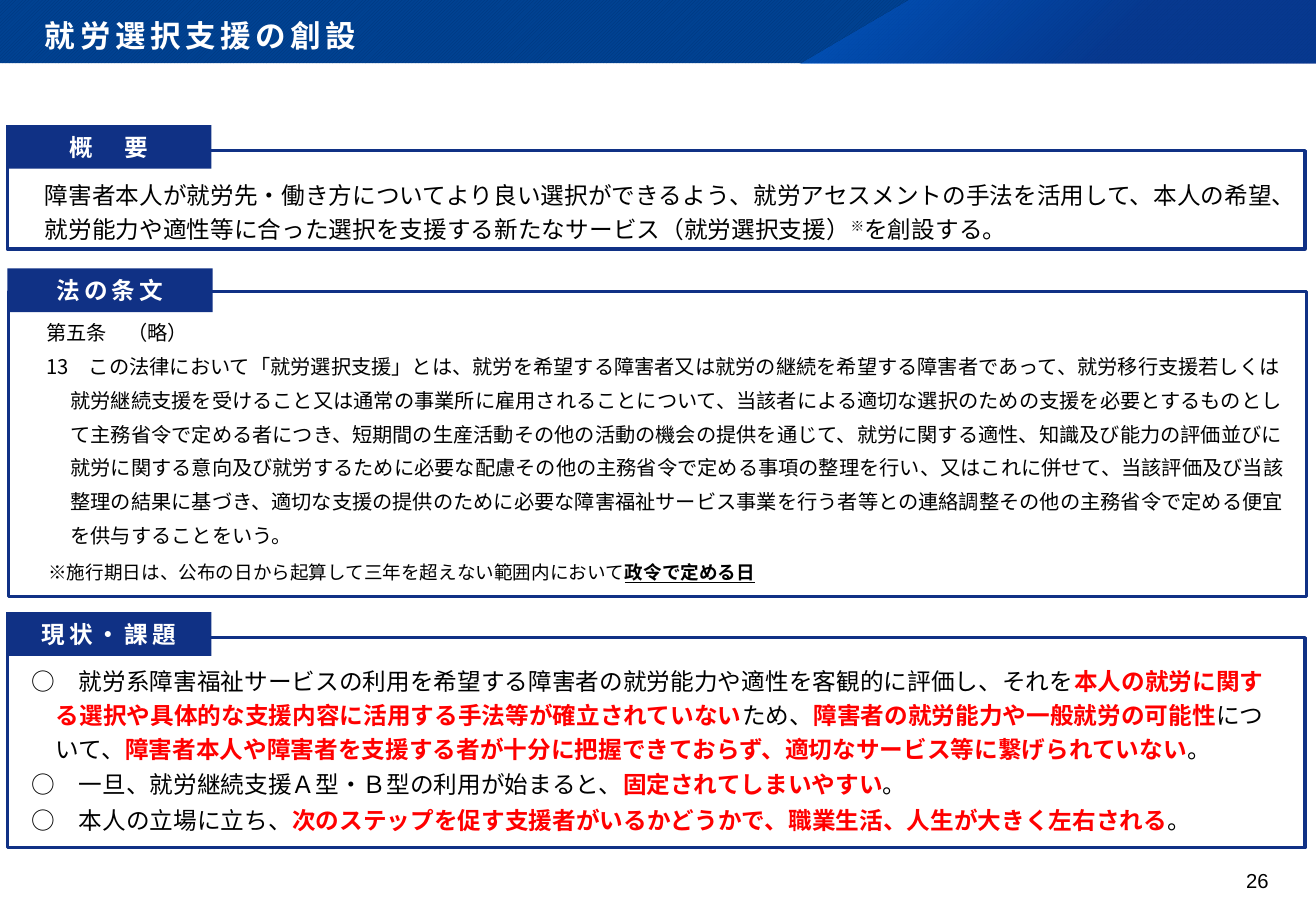
from pptx import Presentation
from pptx.dml.color import RGBColor as Rgb
from pptx.enum.dml import MSO_PATTERN as Pat
from pptx.enum.shapes import MSO_SHAPE as Kind
from pptx.enum.text import MSO_ANCHOR as Anchor, PP_ALIGN as Align
from pptx.oxml import parse_xml
from pptx.oxml.ns import nsdecls, qn
from pptx.util import Inches, Pt

HUES = {"navy": "103185", "white": "FFFFFF", "black": "000000", "red": "FF0000",
        "band": "004292", "stripe": "003579", "glow": "0064DF", "deep": "0C338E"}
FONT = "Noto Sans CJK JP"
RED = {"hue": "red", "bold": True}


def hue(name):
    return Rgb.from_string(HUES[name])


def write(para, text, size=14, font=FONT, hue_name="black", bold=False, line=False, track=0, base=0):
    run = para.add_run()
    run.text = text
    face = run.font
    face.name, face.size, face.bold, face.underline = font, Pt(size), bold, line
    face.color.rgb = hue(hue_name)
    props = run._r.get_or_add_rPr()
    if track:
        props.set("spc", str(int(track * 100)))
    if base:
        props.set("baseline", str(base * 1000))
    east = props.makeelement(qn("a:ea"), {"typeface": font})
    props.find(qn("a:latin")).addnext(east)


class Deck:
    """Holds the style and the current slide, and draws each kind of element."""

    def __init__(self, wide, high):
        self.show = Presentation()
        self.show.slide_width, self.show.slide_height = Inches(wide), Inches(high)
        self.slide = self.show.slides.add_slide(self.show.slide_layouts[6])
        self.shapes = self.slide.shapes

    def rect(self, *spot, fill=None, line=None):
        shape = self.shapes.add_shape(Kind.RECTANGLE, *map(Inches, spot))
        shape.shadow.inherit = False
        if fill:
            shape.fill.solid()
            shape.fill.fore_color.rgb = hue(fill)
        else:
            shape.fill.background()
        if line:
            shape.line.color.rgb = hue(line)
            shape.line.width = Pt(2)
        else:
            shape.line.fill.background()
        return shape

    def text(self, shape, paras, pad=(0.1, 0.05, 0.1, 0.05), anchor=Anchor.TOP, align=Align.LEFT, **style):
        frame = shape.text_frame
        frame.word_wrap, frame.vertical_anchor = True, anchor
        (frame.margin_left, frame.margin_top,
         frame.margin_right, frame.margin_bottom) = map(Inches, pad)
        for i, (runs, space, after, hang) in enumerate(paras):
            para = frame.add_paragraph() if i else frame.paragraphs[0]
            para.alignment, para.line_spacing = align, space
            para.space_before, para.space_after = Pt(0), Pt(after)
            if hang:
                props = para._p.get_or_add_pPr()
                props.set("marL", str(Inches(hang)))
                props.set("indent", str(-Inches(hang)))
            for words, extra in runs:
                look = {**style, **extra}
                look["hue_name"] = look.pop("hue", "black")
                write(para, words, **look)

    def label(self, spot, paras, **style):
        self.text(self.shapes.add_textbox(*map(Inches, spot)), paras, **style)

    def panel(self, spot, paras, left=0.31, **style):
        self.text(self.rect(*spot, line="navy"), paras, pad=(left, 0.2, 0.16, 0.2), **style)

    def tag(self, left, top, words):
        shape = self.rect(left, top, 1.69, 0.36, fill="navy")
        self.text(shape, [([(words, {})], 1, 0, 0)], anchor=Anchor.MIDDLE,
                  align=Align.CENTER, hue="white", bold=True, track=2.4)

    def banner(self):
        band = self.rect(0, 0, 10.83, 0.52, fill="band")
        band.fill.patterned()
        band.fill.pattern = Pat.DARK_UPWARD_DIAGONAL
        band.fill.fore_color.rgb, band.fill.back_color.rgb = hue("stripe"), hue("band")
        pen = self.shapes.build_freeform(Inches(7.49), 0)
        pen.add_line_segments([(Inches(x), Inches(y)) for x, y in
                               [(10.83, 0), (10.83, 0.52), (6.58, 0.52)]])
        wedge = pen.convert_to_shape()
        wedge.shadow.inherit = False
        wedge.line.fill.background()
        wedge.fill.gradient()
        stops = "".join(
            f'<a:gs pos="{pos}000"><a:srgbClr val="{HUES[name]}"><a:alpha val="{alpha}000"/></a:srgbClr></a:gs>'
            for pos, name, alpha in [(0, "glow", 50), (62, "deep", 55)])
        grad = parse_xml(f'<a:gradFill {nsdecls("a")} rotWithShape="1"><a:gsLst>{stops}</a:gsLst>'
                         '<a:path path="circle"><a:fillToRect r="100000" b="100000"/></a:path></a:gradFill>')
        props = wedge._element.spPr
        props.replace(props.find(qn("a:gradFill")), grad)


def main():
    deck = Deck(10.83, 7.5)
    deck.banner()
    deck.label((9.75, 7.15, 0.69, 0.3), [([("26", {})], 1, 0, 0)],
               pad=(0, 0, 0, 0), align=Align.RIGHT, size=12, font="Arial")
    deck.label((-0.02, -0.04, 10.83, 0.63), [([("就労選択支援の創設", {})], 0.9, 0, 0)],
               pad=(0.39, 0, 0.36, 0.14), anchor=Anchor.BOTTOM,
               size=18.1, font="Roboto", hue="white", bold=True, track=2.7)

    deck.panel((0.06, 1.24, 10.68, 0.81), [([
        ("障害者本人が就労先・働き方についてより良い選択ができるよう、就労アセスメントの手法を活用して、本人の希望、"
         "就労能力や適性等に合った選択を支援する新たなサービス（就労選択支援）", {}),
        ("※", {"base": 30}),
        ("を創設する。", {})], 1.2, 7, 0)])
    deck.tag(0.05, 1.03, "概　要")

    deck.panel((0.07, 2.4, 10.68, 2.51), [
        ([("第五条　（略）", {})], 1.2, 0, 0.2),
        ([("13　この法律において「就労選択支援」とは、就労を希望する障害者又は就労の継続を希望する障害者であって、"
           "就労移行支援若しくは就労継続支援を受けること又は通常の事業所に雇用されることについて、"
           "当該者による適切な選択のための支援を必要とするものとして主務省令で定める者につき、"
           "短期間の生産活動その他の活動の機会の提供を通じて、就労に関する適性、知識及び能力の評価並びに"
           "就労に関する意向及び就労するために必要な配慮その他の主務省令で定める事項の整理を行い、"
           "又はこれに併せて、当該評価及び当該整理の結果に基づき、適切な支援の提供のために必要な"
           "障害福祉サービス事業を行う者等との連絡調整その他の主務省令で定める便宜を供与することをいう。", {})],
         Pt(20), 0, 0.2)], size=12)
    deck.label((0.3, 4.53, 8.52, 0.44), [([
        ("※施行期日は、公布の日から起算して三年を超えない範囲内において", {}),
        ("政令で定める日", {"bold": True, "line": True})], 1.2, 6, 0)], size=11)
    deck.tag(0.06, 2.21, "法の条文")

    deck.panel((0.06, 5.25, 10.68, 1.73), [
        ([("○　就労系障害福祉サービスの利用を希望する障害者の就労能力や適性を客観的に評価し、それを", {}),
          ("本人の就労に関する選択や具体的な支援内容に活用する手法等が確立されていない", RED),
          ("ため、", {}),
          ("障害者の就労能力や一般就労の可能性", RED),
          ("について、", {}),
          ("障害者本人や障害者を支援する者が十分に把握できておらず、適切なサービス等に繋げられていない", RED),
          ("。", {})], Pt(20), 7, 0.2),
        ([("○　一旦、就労継続支援Ａ型・Ｂ型の利用が始まると、", {}),
          ("固定されてしまいやすい", RED),
          ("。", {})], Pt(14), 7, 0),
        ([("○　本人の立場に立ち、", {}),
          ("次のステップを促す支援者がいるかどうかで、職業生活、人生が大きく左右される", RED),
          ("。", {})], Pt(14), 7, 0)], left=0.2)
    deck.tag(0.05, 5.04, "現状・課題")
    deck.show.save("out.pptx")


if __name__ == "__main__":
    main()
